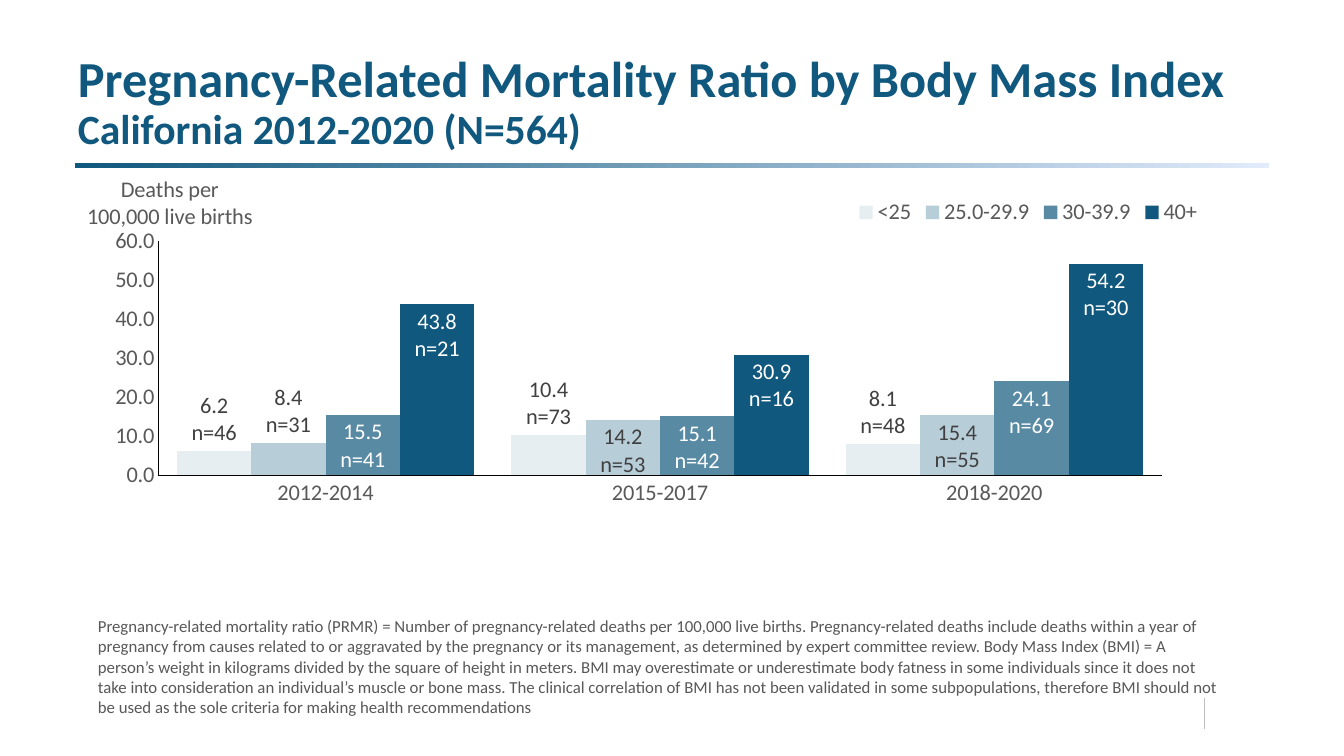
from lxml import etree
from pptx import Presentation
from pptx.chart.data import CategoryChartData
from pptx.dml.color import RGBColor
from pptx.enum.chart import XL_CHART_TYPE, XL_LABEL_POSITION, XL_LEGEND_POSITION, XL_TICK_MARK
from pptx.enum.shapes import MSO_CONNECTOR, MSO_SHAPE
from pptx.enum.text import MSO_ANCHOR, PP_ALIGN
from pptx.oxml import parse_xml
from pptx.oxml.ns import nsdecls, qn
from pptx.util import Emu, Pt

COLUMN = XL_CHART_TYPE.COLUMN_CLUSTERED
OUTSIDE, INSIDE = XL_LABEL_POSITION.OUTSIDE_END, XL_LABEL_POSITION.INSIDE_END
LEGEND_TOP = XL_LEGEND_POSITION.TOP
NO_TICK = XL_TICK_MARK.NONE
LINE, RECT = MSO_CONNECTOR.STRAIGHT, MSO_SHAPE.RECTANGLE
TOP, BOTTOM = MSO_ANCHOR.TOP, MSO_ANCHOR.BOTTOM
CENTER = PP_ALIGN.CENTER

FONT = "Calibri"
NAVY, PALE, GREY, DARK, WHITE = "10587D", "E1EBFB", "595959", "404040", "FFFFFF"

TITLE = [("Pregnancy-Related Mortality Ratio by Body Mass Index", 36),
         ("California 2012-2020 (N=564)", 29.7)]
NOTE = [(
    "Pregnancy-related mortality ratio (PRMR) = Number of pregnancy-related deaths per "
    "100,000 live births. Pregnancy-related deaths include deaths within a year of pregnancy "
    "from causes related to or aggravated by the pregnancy or its management, as determined by "
    "expert committee review. Body Mass Index (BMI) = A person’s weight in kilograms divided by "
    "the square of height in meters. BMI may overestimate or underestimate body fatness in some "
    "individuals since it does not take into consideration an individual’s muscle or bone mass. "
    "The clinical correlation of BMI has not been validated in some subpopulations, therefore "
    "BMI should not be used as the sole criteria for making health recommendations", 12)]
AXIS_TITLE = [("Deaths per", 16), ("100,000 live births", 16)]

PERIODS = ["2012-2014", "2015-2017", "2018-2020"]
# BMI group, bar colour, label colour, ratios, deaths, label positions
GROUPS = [
    ("<25", "E7EEF2", DARK, (6.2, 10.4, 8.1), (46, 73, 48), (OUTSIDE, OUTSIDE, OUTSIDE)),
    ("25.0-29.9", "B7CDD8", DARK, (8.4, 14.2, 15.4), (31, 53, 55), (OUTSIDE, INSIDE, INSIDE)),
    ("30-39.9", "588AA4", WHITE, (15.5, 15.1, 24.1), (41, 42, 69), (INSIDE, INSIDE, INSIDE)),
    ("40+", NAVY, WHITE, (43.8, 30.9, 54.2), (21, 16, 30), (INSIDE, INSIDE, INSIDE)),
]


def px(*lengths):
    return [Emu(round(n * 914400 / 100.8)) for n in lengths]


def rgb(color):
    return RGBColor.from_string(color)


def style(font, size, color, bold=False):
    font.name, font.size, font.bold = FONT, Pt(size), bold
    font.color.rgb = rgb(color)


def write(tf, lines, color=GREY, bold=False, align=None, spacing=None):
    """Fill a text frame with one paragraph for each (text, size) pair."""
    for i, (text, size) in enumerate(lines):
        p = tf.add_paragraph() if i else tf.paragraphs[0]
        p.alignment, p.line_spacing = align, spacing
        r = p.add_run()
        r.text = text
        style(r.font, size, color, bold)


def add_text(slide, box, lines, anchor=TOP, **fmt):
    tf = slide.shapes.add_textbox(*px(*box)).text_frame
    tf.word_wrap = True
    tf.vertical_anchor = anchor
    write(tf, lines, **fmt)


def set_layout(parent, inner=False, **place):
    """Place a chart part by fractions (x, y, w, h) of the chart."""
    for old in parent.findall(qn("c:layout")):
        parent.remove(old)
    items = '<c:layoutTarget val="inner"/>' if inner else ""
    items += "".join(f'<c:{k}Mode val="edge"/>' for k in place)
    items += "".join(f'<c:{k} val="{v}"/>' for k, v in place.items())
    layout = parse_xml(f'<c:layout {nsdecls("c")}><c:manualLayout>{items}'
                       '</c:manualLayout></c:layout>')
    overlay = parent.find(qn("c:overlay"))
    if overlay is None:
        parent.insert(0, layout)
    else:
        overlay.addprevious(layout)


def add_rule(slide):
    s = slide.shapes.add_shape(RECT, *px(75, 163, 1194, 5))
    s.shadow.inherit = False
    s.line.fill.background()
    s.fill.gradient()
    s.fill.gradient_angle = 0
    for stop, color in zip(s.fill.gradient_stops, (NAVY, PALE)):
        stop.color.rgb = rgb(color)


def add_page_mark(slide):
    line = slide.shapes.add_connector(LINE, *px(1204, 698, 1204, 729))
    line.line.color.rgb = rgb("BFBFBF")
    line.line.width = Pt(0.5)
    etree.SubElement(line._element.spPr, qn("a:effectLst"))


def format_axes(chart):
    for axis in (chart.category_axis, chart.value_axis):
        axis.major_tick_mark = axis.minor_tick_mark = NO_TICK
        axis.has_major_gridlines = False
        axis.format.line.color.rgb = rgb("000000")
        axis.format.line.width = Pt(0.75)
        style(axis.tick_labels.font, 16, GREY)
    axis = chart.value_axis
    axis.minimum_scale, axis.maximum_scale, axis.major_unit = 0, 60, 10
    axis.tick_labels.number_format = "0.0"
    axis.tick_labels.number_format_is_linked = False
    tf = axis.axis_title.text_frame
    write(tf, AXIS_TITLE, align=CENTER)
    body = tf._txBody.bodyPr
    body.set("rot", "0")
    body.set("vert", "horz")
    set_layout(axis.axis_title._element, x=0.01, y=0.03)


def format_series(plot):
    for series, (_, fill, color, ratios, deaths, positions) in zip(plot.series, GROUPS):
        series.format.fill.solid()
        series.format.fill.fore_color.rgb = rgb(fill)
        labels = series.data_labels
        labels.show_value = True
        labels.number_format, labels.number_format_is_linked = "0.0", False
        labels.position = positions[-1]
        style(labels.font, 16, color)
        for i, (ratio, n, position) in enumerate(zip(ratios, deaths, positions)):
            label = series.points[i].data_label
            write(label.text_frame, [(f"{ratio}", 16), (f"n={n}", 16)], color=color)
            label.position = position


def add_ratio_chart(slide):
    data = CategoryChartData(number_format="0.0")
    data.categories = PERIODS
    for name, _, _, ratios, _, _ in GROUPS:
        data.add_series(name, ratios)
    chart = slide.shapes.add_chart(COLUMN, *px(72, 158, 1200, 453), data).chart
    style(chart.font, 16, "000000")
    chart.has_title = False
    plot = chart.plots[0]
    plot.gap_width, plot.overlap = 50, 0
    plot.vary_by_categories = False
    format_axes(chart)
    format_series(plot)
    chart.has_legend = True
    chart.legend.position = LEGEND_TOP
    chart.legend.include_in_layout = True
    style(chart.legend.font, 16, GREY)
    set_layout(chart.legend._element, x=0.65, y=0.08, w=0.32, h=0.08)
    plot_area = chart._chartSpace.find(".//" + qn("c:plotArea"))
    set_layout(plot_area, inner=True, x=0.072, y=0.183, w=0.908, h=0.701)


def main():
    prs = Presentation()
    prs.slide_width, prs.slide_height = px(1344, 756)
    slide = prs.slides.add_slide(prs.slide_layouts[6])
    add_page_mark(slide)
    add_rule(slide)
    add_text(slide, (68, 36, 1210, 122), TITLE, anchor=BOTTOM, color=NAVY, bold=True, spacing=0.9)
    add_text(slide, (88, 611, 1150, 136), NOTE, color="585858")
    add_ratio_chart(slide)
    prs.save("out.pptx")


if __name__ == "__main__":
    main()
